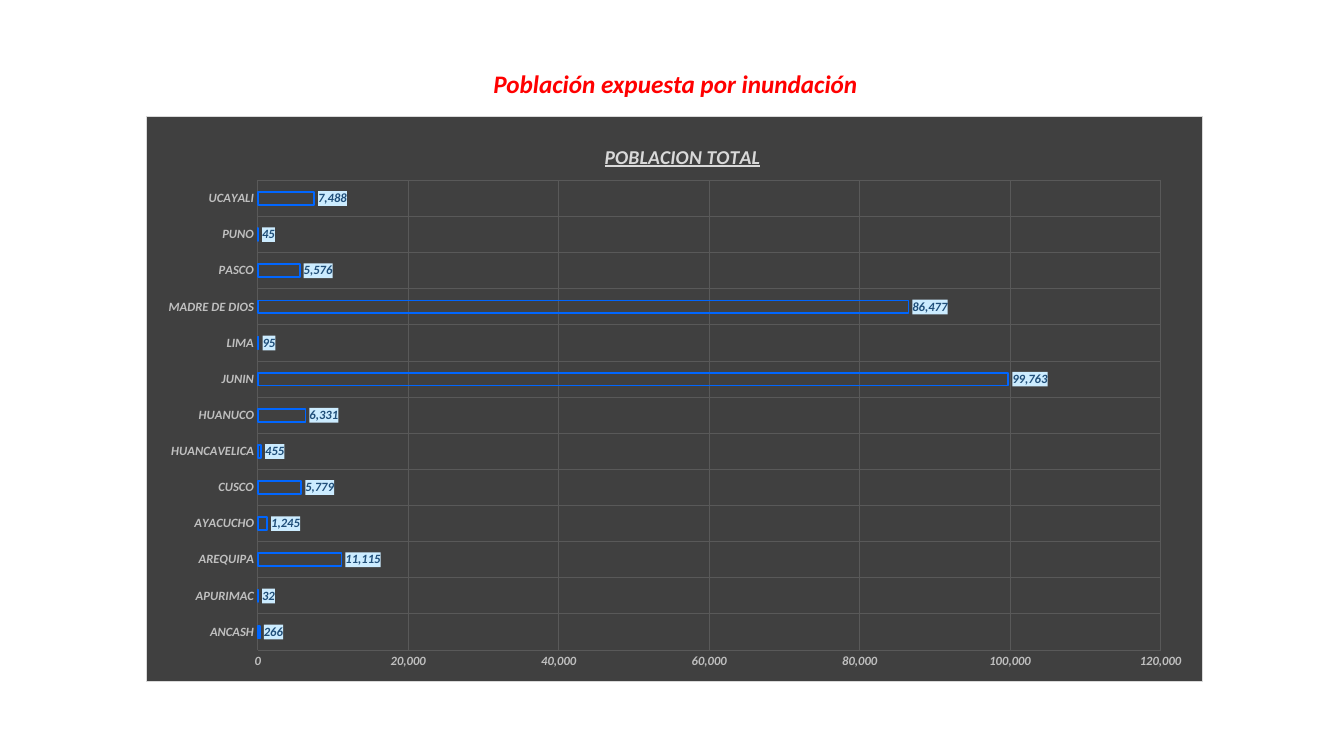
import pptx
import pptx.chart.data
import pptx.dml.color
import pptx.enum.chart
import pptx.enum.text
import pptx.oxml
import pptx.oxml.ns
import pptx.util

Pt = pptx.util.Pt
FONT = "Calibri"
COLORS = {
    "heading": "FF0000",
    "panel": "404040",
    "panel_border": "D9D9D9",
    "title": "D9D9D9",
    "axis_text": "BFBFBF",
    "grid": "595959",
    "bar": "0066FF",
    "label_text": "1F4E79",
    "label_fill": "CCECFF",
}
POPULATION = {
    "ANCASH": 266,
    "APURIMAC": 32,
    "AREQUIPA": 11115,
    "AYACUCHO": 1245,
    "CUSCO": 5779,
    "HUANCAVELICA": 455,
    "HUANUCO": 6331,
    "JUNIN": 99763,
    "LIMA": 95,
    "MADRE DE DIOS": 86477,
    "PASCO": 5576,
    "PUNO": 45,
    "UCAYALI": 7488,
}


def rgb(name):
    return pptx.dml.color.RGBColor.from_string(COLORS[name])


def style_font(font, size, color):
    font.name = FONT
    font.size = Pt(size)
    font.bold = True
    font.italic = True
    font.color.rgb = rgb(color)


def chart_element(content):
    """Parse chart XML with the c and a prefixes declared on its root."""
    tag, rest = content.split(">", 1)
    namespaces = pptx.oxml.ns.nsdecls("c", "a")
    return pptx.oxml.parse_xml(f"{tag} {namespaces}>{rest}")


def shape_properties(fill, border=None):
    line = "<a:ln><a:noFill/></a:ln>"
    if border:
        line = (f'<a:ln w="{Pt(0.75)}"><a:solidFill><a:srgbClr val="{COLORS[border]}"/>'
                "</a:solidFill></a:ln>")
    return chart_element(
        f'<c:spPr><a:solidFill><a:srgbClr val="{COLORS[fill]}"/></a:solidFill>{line}</c:spPr>')


def manual_layout(**settings):
    values = "".join(f'<c:{key} val="{value}"/>' for key, value in settings.items())
    return chart_element(f"<c:layout><c:manualLayout>{values}</c:manualLayout></c:layout>")


def replace_layout(parent, layout, index):
    for old_layout in parent.findall(pptx.oxml.ns.qn("c:layout")):
        parent.remove(old_layout)
    parent.insert(index, layout)


def add_heading(slide, text):
    box = slide.shapes.add_textbox(Pt(343.5), Pt(45.4), Pt(278), Pt(29))
    frame = box.text_frame
    frame.word_wrap = False
    frame.text = text
    paragraph = frame.paragraphs[0]
    paragraph.alignment = pptx.enum.text.PP_ALIGN.CENTER
    style_font(paragraph.runs[0].font, 18, "heading")


def style_title(chart, text):
    chart.has_title = True
    title = chart.chart_title
    title.text_frame.text = text
    font = title.text_frame.paragraphs[0].runs[0].font
    style_font(font, 14, "title")
    font.underline = True
    layout = manual_layout(xMode="edge", yMode="edge", x=0.43, y=0.04)
    replace_layout(title._element, layout, 1)


def style_axis(axis):
    axis.has_major_gridlines = True
    grid_line = axis.major_gridlines.format.line
    grid_line.color.rgb = rgb("grid")
    grid_line.width = Pt(0.75)
    axis.major_tick_mark = pptx.enum.chart.XL_TICK_MARK.NONE
    axis.minor_tick_mark = pptx.enum.chart.XL_TICK_MARK.NONE
    axis.format.line.fill.background()
    style_font(axis.tick_labels.font, 9, "axis_text")


def style_bars(plot):
    plot.gap_width = 182
    plot.overlap = -50
    plot.vary_by_categories = False
    bars = plot.series[0].format
    bars.fill.background()
    bars.line.color.rgb = rgb("bar")
    bars.line.width = Pt(1.25)


def style_labels(plot):
    plot.has_data_labels = True
    labels = plot.data_labels
    labels.show_value = True
    labels.number_format = "#,##0"
    labels.number_format_is_linked = False
    labels.position = pptx.enum.chart.XL_LABEL_POSITION.OUTSIDE_END
    style_font(labels.font, 9, "label_text")
    text_properties = labels._element.find(pptx.oxml.ns.qn("c:txPr"))
    text_properties.addprevious(shape_properties("label_fill"))


def add_population_chart(slide):
    data = pptx.chart.data.CategoryChartData(number_format="#,##0")
    data.categories = list(POPULATION)
    data.add_series("POBLACION TOTAL", list(POPULATION.values()))
    chart = slide.shapes.add_chart(
        pptx.enum.chart.XL_CHART_TYPE.BAR_CLUSTERED,
        Pt(104.6), Pt(83), Pt(755), Pt(404), data).chart
    chart.has_legend = False
    chart.font.name = FONT
    chart.font.size = Pt(10)

    style_title(chart, "POBLACION TOTAL")
    style_axis(chart.category_axis)
    style_axis(chart.value_axis)
    chart.value_axis.minimum_scale = 0
    chart.value_axis.maximum_scale = 120000
    chart.value_axis.major_unit = 20000
    chart.value_axis.tick_labels.number_format = "#,##0"
    chart.value_axis.tick_labels.number_format_is_linked = False
    style_bars(chart.plots[0])
    style_labels(chart.plots[0])

    chart_body = chart._chartSpace.find(pptx.oxml.ns.qn("c:chart"))
    chart_body.addnext(shape_properties("panel", "panel_border"))
    plot_area = chart_body.find(pptx.oxml.ns.qn("c:plotArea"))
    layout = manual_layout(layoutTarget="inner", xMode="edge", yMode="edge",
                           x=0.105, y=0.113, w=0.855, h=0.832)
    replace_layout(plot_area, layout, 0)


def main():
    presentation = pptx.Presentation()
    presentation.slide_width = Pt(960)
    presentation.slide_height = Pt(540)
    slide = presentation.slides.add_slide(presentation.slide_layouts[6])
    add_heading(slide, "Población expuesta por inundación")
    add_population_chart(slide)
    presentation.save("out.pptx")


if __name__ == "__main__":
    main()
